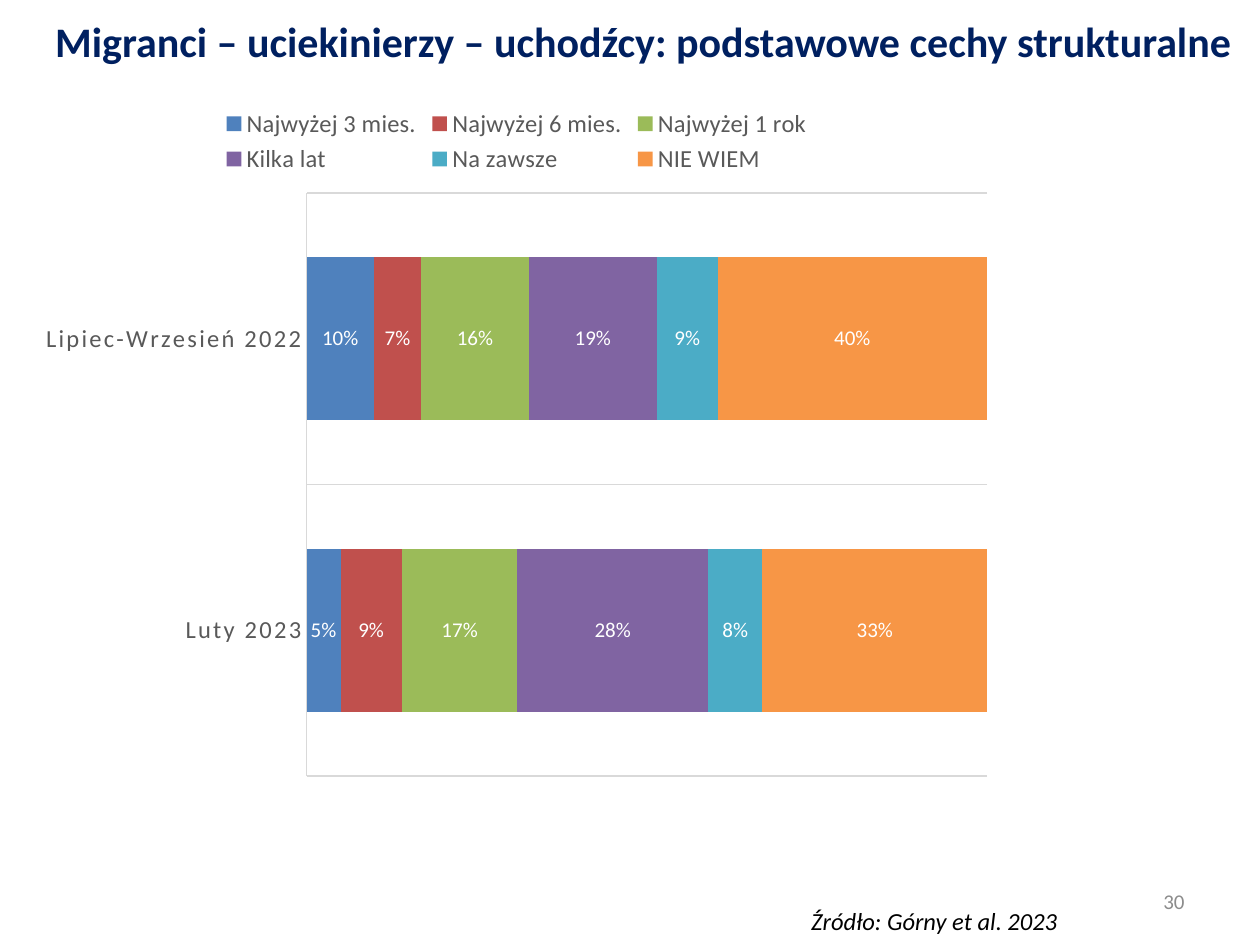
from dataclasses import dataclass

from pptx import Presentation
from pptx.chart.chart import Chart
from pptx.chart.data import CategoryChartData
from pptx.dml.color import RGBColor
from pptx.enum.chart import XL_CHART_TYPE, XL_LABEL_POSITION, XL_LEGEND_POSITION, XL_TICK_MARK
from pptx.enum.text import MSO_ANCHOR, PP_ALIGN
from pptx.slide import Slide
from pptx.text.text import Font
from pptx.util import Inches, Pt

STACKED = XL_CHART_TYPE.BAR_STACKED_100
CENTER = XL_LABEL_POSITION.CENTER
LEGEND_TOP = XL_LEGEND_POSITION.TOP
NO_TICK = XL_TICK_MARK.NONE
TOP, MIDDLE = MSO_ANCHOR.TOP, MSO_ANCHOR.MIDDLE
LEFT, RIGHT = PP_ALIGN.LEFT, PP_ALIGN.RIGHT
FONT = "Calibri"
GREY, RULE, WHITE = "595959", "D9D9D9", "FFFFFF"
LETTER_SPACING = "120"


@dataclass
class Label:
    text: str
    left: float
    top: float
    width: float
    height: float
    size: float
    color: str
    bold: bool = False
    italic: bool = False
    align: PP_ALIGN = LEFT
    anchor: MSO_ANCHOR = TOP


@dataclass
class Answer:
    name: str
    shares: tuple[float, float]
    color: str


LABELS = [
    Label("30", 7.17, 6.95, 2.33, 0.4, 12, "8C8C8C", align=RIGHT, anchor=MIDDLE),
    Label("Źródło: Górny et al. 2023", 6.34, 7.14, 2.3, 0.34, 14, "000000", italic=True),
    Label("Migranci – uciekinierzy – uchodźcy: podstawowe cechy strukturalne",
          0.34, 0.05, 9.66, 0.55, 24, "002060", bold=True, anchor=MIDDLE),
]
PERIODS = ["Luty 2023", "Lipiec-Wrzesień 2022"]
ANSWERS = [
    Answer("Najwyżej 3 mies.", (0.05, 0.10), "4F81BD"),
    Answer("Najwyżej 6 mies.", (0.09, 0.07), "C0504D"),
    Answer("Najwyżej 1 rok", (0.17, 0.16), "9BBB59"),
    Answer("Kilka lat", (0.28, 0.19), "8064A2"),
    Answer("Na zawsze", (0.08, 0.09), "4BACC6"),
    Answer("NIE WIEM", (0.33, 0.40), "F79646"),
]


def rgb(value: str) -> RGBColor:
    """Turn a hex string into a colour."""
    return RGBColor.from_string(value)


def set_font(font: Font, size: float, color: str) -> None:
    """Set the typeface, size and colour of a font."""
    font.name = FONT
    font.size = Pt(size)
    font.color.rgb = rgb(color)


def add_label(page: Slide, label: Label) -> None:
    """Add one line of text to the page."""
    box = page.shapes.add_textbox(Inches(label.left), Inches(label.top),
                                  Inches(label.width), Inches(label.height))
    frame = box.text_frame
    frame.word_wrap = True
    frame.vertical_anchor = label.anchor
    para = frame.paragraphs[0]
    para.text = label.text
    para.alignment = label.align
    set_font(para.font, label.size, label.color)
    para.font.bold = label.bold
    para.font.italic = label.italic


def style_axes(chart: Chart) -> None:
    """Show the spaced period names and hide the percentage axis."""
    periods = chart.category_axis
    periods.major_tick_mark = periods.minor_tick_mark = NO_TICK
    periods.has_major_gridlines = True
    for line in (periods.format.line, periods.major_gridlines.format.line):
        line.color.rgb = rgb(RULE)
        line.width = Pt(0.75)
    set_font(periods.tick_labels.font, 14, GREY)
    for properties in chart.element.xpath(".//c:catAx/c:txPr//a:defRPr"):
        properties.set("spc", LETTER_SPACING)
    chart.value_axis.has_major_gridlines = False
    chart.value_axis.tick_labels.number_format = "0%"
    chart.value_axis.tick_labels.number_format_is_linked = False
    chart.value_axis.visible = False


def add_answer_chart(page: Slide) -> None:
    """Add the stacked bars of planned length of stay."""
    data = CategoryChartData(number_format="0%")
    data.categories = PERIODS
    for answer in ANSWERS:
        data.add_series(answer.name, answer.shares)
    chart = page.shapes.add_chart(STACKED, Inches(0.21), Inches(0.75),
                                  Inches(7.78), Inches(5.52), data).chart
    set_font(chart.font, 10, "000000")
    chart.has_title = False
    chart.has_legend = True
    chart.legend.position = LEGEND_TOP
    chart.legend.include_in_layout = False
    set_font(chart.legend.font, 14, GREY)
    style_axes(chart)
    plot = chart.plots[0]
    plot.vary_by_categories = False
    plot.gap_width = 79
    plot.overlap = 100
    for series, answer in zip(plot.series, ANSWERS):
        series.format.fill.solid()
        series.format.fill.fore_color.rgb = rgb(answer.color)
        labels = series.data_labels
        labels.show_value = True
        labels.position = CENTER
        labels.number_format = "0%"
        labels.number_format_is_linked = False
        set_font(labels.font, 12, WHITE)


def main() -> None:
    """Build the slide and save it."""
    deck = Presentation()
    deck.slide_width, deck.slide_height = Inches(10), Inches(7.5)
    page = deck.slides.add_slide(deck.slide_layouts[6])
    add_answer_chart(page)
    for label in LABELS:
        add_label(page, label)
    deck.save("out.pptx")


if __name__ == "__main__":
    main()
